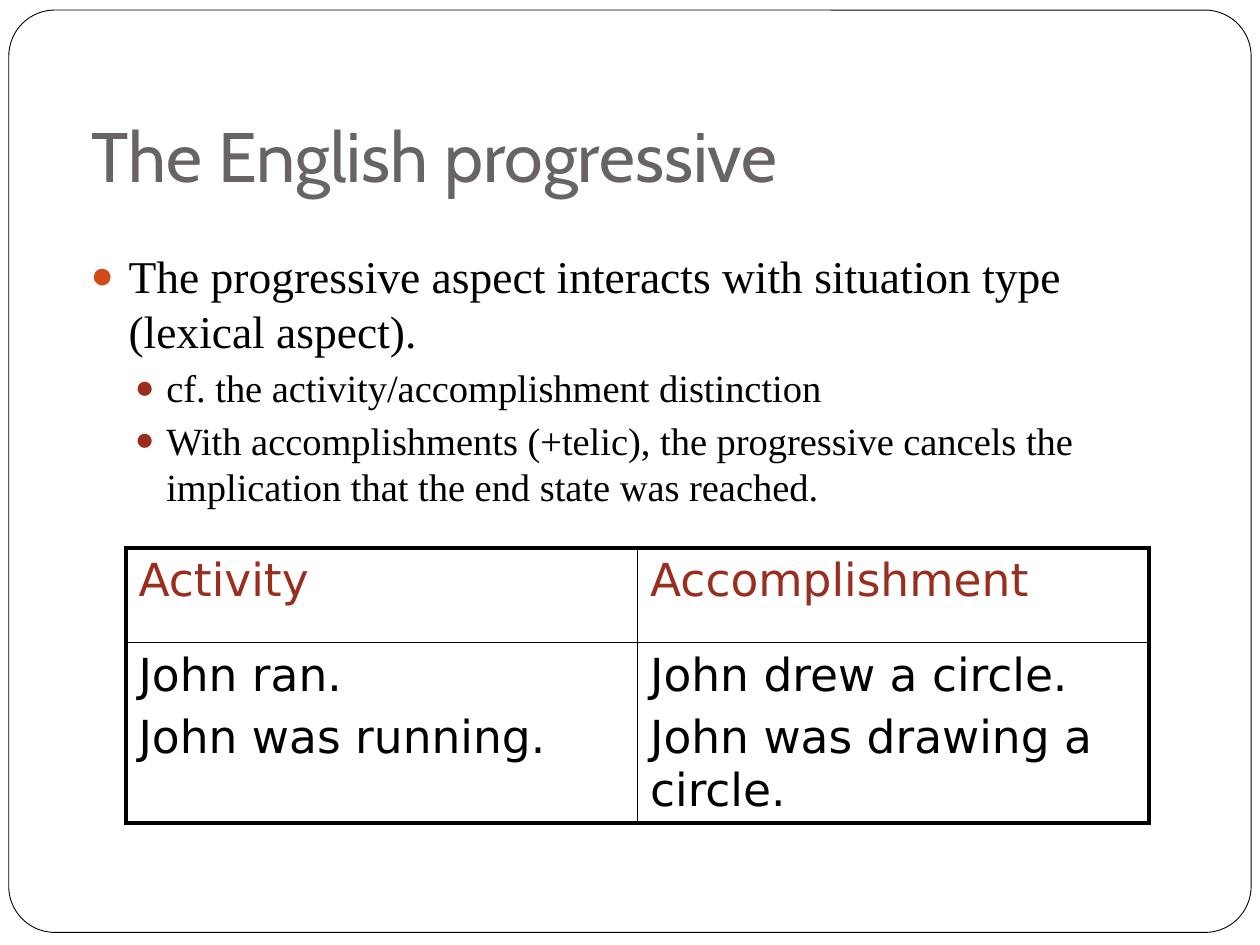
from lxml.etree import SubElement
from pptx import Presentation
from pptx.dml.color import RGBColor
from pptx.enum.shapes import MSO_SHAPE
from pptx.enum.text import MSO_ANCHOR, MSO_AUTO_SIZE, PP_ALIGN
from pptx.oxml.ns import qn
from pptx.util import Inches, Pt

COLORS = {
    "paper": "FFFFFF",
    "ink": "000000",
    "title": "696464",
    "orange": "D34817",
    "red": "9B2D1F",
}
POINTS = [
    (0, "The progressive aspect interacts with situation type (lexical aspect)."),
    (1, "cf. the activity/accomplishment distinction"),
    (1, "With accomplishments (+telic), the progressive cancels the "
        "implication that the end state was reached."),
]
LEVELS = [
    {"size": 26, "before": 5.8, "margin": 0.3, "hang": 0.3, "bullet": "orange"},
    {"size": 22, "before": 3.7, "margin": 0.6, "hang": 0.25, "bullet": "red"},
]
EXAMPLES = [
    [["Activity"], ["Accomplishment"]],
    [["John ran.", "John was running."],
     ["John drew a circle.", "John was drawing a circle."]],
]


def rgb(name):
    """Return the palette colour called name."""
    return RGBColor.from_string(COLORS[name])


def place(part, box):
    """Move a part to a box of left, top, width and height in inches."""
    part.left, part.top, part.width, part.height = map(Inches, box)


def style(paragraph, face, size, color):
    """Set the font of a whole paragraph."""
    font = paragraph.font
    font.name, font.size, font.color.rgb = face, Pt(size), rgb(color)


def add_bullet(paragraph, margin, hang, color):
    """Give a paragraph a hanging, coloured round bullet."""
    props = paragraph._p.get_or_add_pPr()
    props.set("marL", str(Inches(margin)))
    props.set("indent", str(-Inches(hang)))
    tint = SubElement(props, qn("a:buClr"))
    SubElement(tint, qn("a:srgbClr"), val=COLORS[color])
    SubElement(props, qn("a:buSzPct"), val="85000")
    SubElement(props, qn("a:buChar"), char="●")


def set_borders(cell, widths):
    """Draw the left, right, top and bottom borders of a cell."""
    props = cell._tc.get_or_add_tcPr()
    for index, (side, width) in enumerate(zip("LRTB", widths)):
        line = props.makeelement(qn(f"a:ln{side}"), {"w": str(Pt(width))})
        fill = SubElement(line, qn("a:solidFill"))
        SubElement(fill, qn("a:srgbClr"), val=COLORS["ink"])
        props.insert(index, line)


def add_frame(slide, box):
    """Draw the rounded page frame."""
    frame = slide.shapes.add_shape(MSO_SHAPE.ROUNDED_RECTANGLE, *map(Inches, box))
    frame.adjustments[0] = 0.05
    frame.shadow.inherit = False
    frame.fill.solid()
    frame.fill.fore_color.rgb = rgb("paper")
    frame.line.color.rgb = rgb("ink")
    frame.line.width = Pt(0.5)
    slide.shapes._spTree.insert(2, frame._element)


def fill_title(slide, box):
    """Place and format the slide title."""
    title = slide.shapes.title
    place(title, box)
    text = title.text_frame
    text.text = "The English progressive"
    text.auto_size = MSO_AUTO_SIZE.NONE
    text.vertical_anchor = MSO_ANCHOR.BOTTOM
    text.margin_bottom = Inches(0.1)
    text.paragraphs[0].alignment = PP_ALIGN.LEFT
    style(text.paragraphs[0], "Cabin", 40, "title")


def fill_points(slide, box):
    """Place the bulleted list."""
    body = slide.placeholders[1]
    place(body, box)
    text = body.text_frame
    text.text = "\n".join(point for _, point in POINTS)
    text.auto_size = MSO_AUTO_SIZE.NONE
    for paragraph, (depth, _) in zip(text.paragraphs, POINTS):
        level = LEVELS[depth]
        paragraph.level = depth
        paragraph.space_before = Pt(level["before"])
        add_bullet(paragraph, level["margin"], level["hang"], level["bullet"])
        style(paragraph, "Times New Roman", level["size"], "ink")


def add_examples(slide, box, row_heights):
    """Add the table that contrasts activities with accomplishments."""
    rows, columns = len(EXAMPLES), len(EXAMPLES[0])
    table = slide.shapes.add_table(rows, columns, *map(Inches, box)).table
    table.first_row = table.horz_banding = False
    for row, height in zip(table.rows, row_heights):
        row.height = Inches(height)
    for r, row in enumerate(EXAMPLES):
        for c, sentences in enumerate(row):
            cell = table.cell(r, c)
            cell.text = "\n".join(sentences)
            cell.fill.background()
            outer = (c == 0, c == columns - 1, r == 0, r == rows - 1)
            set_borders(cell, [2.25 if edge else 1 for edge in outer])
            for paragraph in cell.text_frame.paragraphs:
                paragraph.space_before = Pt(5.2)
                style(paragraph, "DejaVu Sans", 26, "ink" if r else "red")


def main():
    """Build and save the slide."""
    deck = Presentation()
    deck.slide_width, deck.slide_height = Inches(10), Inches(7.5)
    slide = deck.slides.add_slide(deck.slide_layouts[1])
    add_frame(slide, (0.07, 0.08, 9.86, 7.32))
    fill_title(slide, (0.63, 0.33, 8.75, 1.33))
    fill_points(slide, (0.62, 1.92, 8.71, 4.67))
    add_examples(slide, (1, 4.35, 8.12, 2.17), (0.75, 1.42))
    deck.save("out.pptx")


if __name__ == "__main__":
    main()
